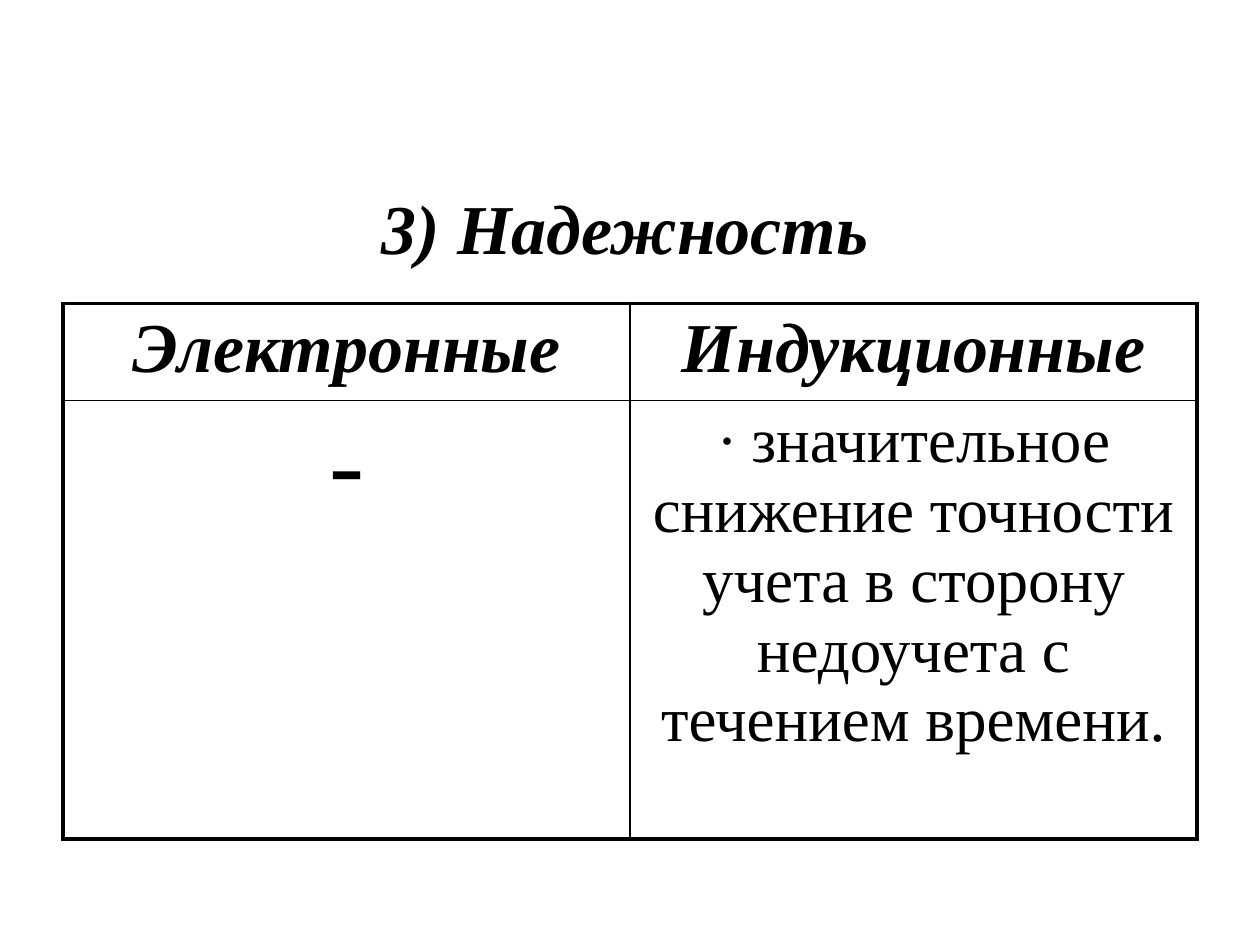
from lxml import etree
from pptx import Presentation
from pptx.dml.color import RGBColor
from pptx.enum import text
from pptx.oxml.ns import qn
from pptx.util import Inches, Pt

COLORS = {"ink": "000000"}
SERIF = "Times New Roman"
SANS = "Arial"
OUTER, INNER = 2.25, 1

HEADERS = ["Электронные", "Индукционные"]
DRAWBACK = [
    ("·", 36, SERIF),
    (" ", 28, SANS),
    ("значительное снижение точности учета в сторону "
     "недоучета с течением времени.", 36, SERIF),
]


def style(font, size, name=SERIF, strong=False):
    font.name = name
    font.size = Pt(size)
    font.bold = font.italic = strong
    font.color.rgb = RGBColor.from_string(COLORS["ink"])


def write(para, words, size, strong=False):
    para.text = words
    para.alignment = text.PP_ALIGN.CENTER
    style(para.font, size, strong=strong)


def write_mixed(para, pieces):
    para.alignment = text.PP_ALIGN.CENTER
    for words, size, name in pieces:
        span = para.add_run()
        span.text = words
        style(span.font, size, name)


def set_borders(cell, widths):
    """Draw the cell's edges; widths maps L, R, T, B to points."""
    props = cell._tc.get_or_add_tcPr()
    for index, side in enumerate("LRTB"):
        line = etree.Element(qn(f"a:ln{side}"), w=str(Pt(widths[side])))
        fill = etree.SubElement(line, qn("a:solidFill"))
        etree.SubElement(fill, qn("a:srgbClr"), val=COLORS["ink"])
        props.insert(index, line)


def add_title(page, words):
    box = page.shapes.title
    box.left, box.top = Inches(0.55), Inches(1.41)
    box.width, box.height = Inches(8.82), Inches(0.77)
    box.text_frame.vertical_anchor = text.MSO_ANCHOR.BOTTOM
    write(box.text_frame.paragraphs[0], words, 40, strong=True)


def add_grid(page, widths, heights):
    rows, cols = len(heights), len(widths)
    table = page.shapes.add_table(
        rows, cols, Inches(0.5), Inches(2.41),
        Inches(sum(widths)), Inches(sum(heights))).table
    table.first_row = table.horz_banding = False
    for column, width in zip(table.columns, widths):
        column.width = Inches(width)
    for row, height in zip(table.rows, heights):
        row.height = Inches(height)
    # Thick frame outside, thin rules inside
    for r in range(rows):
        for c in range(cols):
            cell = table.cell(r, c)
            cell.fill.background()
            edges = {"L": c == 0, "R": c == cols - 1,
                     "T": r == 0, "B": r == rows - 1}
            set_borders(cell, {side: OUTER if outside else INNER
                               for side, outside in edges.items()})
    return table


def main():
    deck = Presentation()
    deck.slide_width, deck.slide_height = Inches(10), Inches(7.5)
    page = deck.slides.add_slide(deck.slide_layouts.get_by_name("Title Only"))

    add_title(page, "3) Надежность")

    # Comparison of the two meter types
    table = add_grid(page, widths=[4.5, 4.5], heights=[0.77, 3.48])
    for col, words in enumerate(HEADERS):
        write(table.cell(0, col).text_frame.paragraphs[0], words, 40, strong=True)
    write(table.cell(1, 0).text_frame.paragraphs[0], "-", 60)
    write_mixed(table.cell(1, 1).text_frame.paragraphs[0], DRAWBACK)

    deck.save("out.pptx")


if __name__ == "__main__":
    main()
